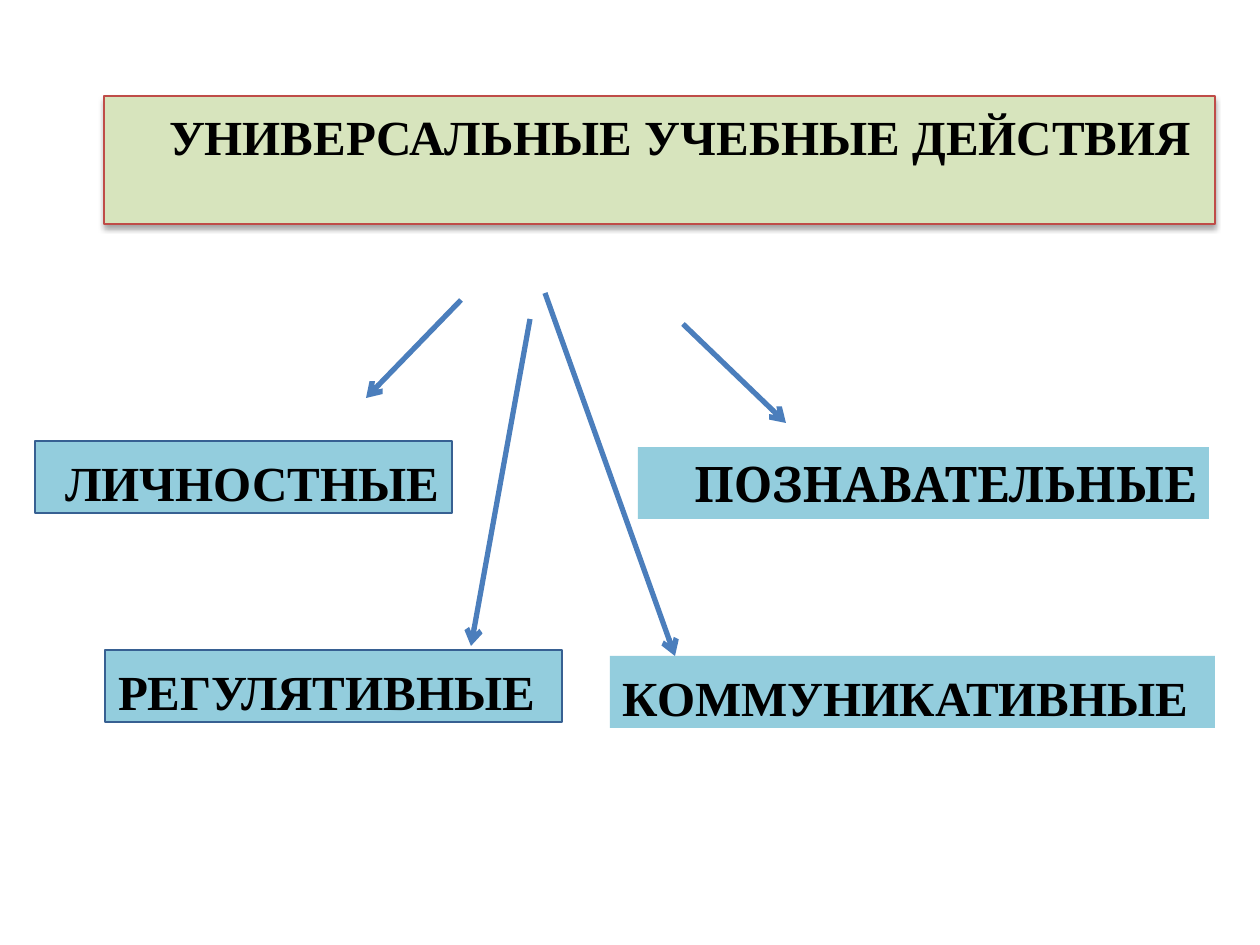
"""Build a slide that splits universal learning actions into four kinds."""
from lxml import etree
from pptx import Presentation
from pptx.dml.color import RGBColor
from pptx.enum.shapes import MSO_CONNECTOR, MSO_SHAPE
from pptx.enum.text import MSO_ANCHOR, PP_ALIGN
from pptx.oxml.ns import qn
from pptx.util import Emu, Pt

RECT = MSO_SHAPE.RECTANGLE
STRAIGHT = MSO_CONNECTOR.STRAIGHT
TOP = MSO_ANCHOR.TOP
LEFT, CENTER, RIGHT = PP_ALIGN.LEFT, PP_ALIGN.CENTER, PP_ALIGN.RIGHT

WIDTH, HEIGHT = 1260, 945
SCALE = 9144000 / WIDTH
SERIF, BOOK = "Times New Roman", "Cambria"
GREEN, BLUE, RED, NAVY = "D7E4BD", "93CDDD", "BF4C48", "376092"
ARROW, BLACK = "4B7EBC", "000000"

TITLE = ("УНИВЕРСАЛЬНЫЕ УЧЕБНЫЕ ДЕЙСТВИЯ", (104, 96, 1111, 128),
         GREEN, RED, CENTER, SERIF, (54, 11))
KINDS = [
    ("ЛИЧНОСТНЫЕ", (35, 441, 417, 72), BLUE, NAVY, RIGHT, SERIF, (13, 11)),
    ("РЕГУЛЯТИВНЫЕ", (105, 650, 457, 72), BLUE, NAVY, LEFT, SERIF, (13, 11)),
    ("ПОЗНАВАТЕЛЬНЫЕ", (638, 447, 571, 72), BLUE, None, RIGHT, BOOK, (13, 6)),
    ("КОММУНИКАТИВНЫЕ", (610, 656, 605, 72), BLUE, None, LEFT, SERIF, (13, 11)),
]
ARROWS = [
    (461, 300, 366, 398),
    (530, 319, 471, 646),
    (683, 324, 786, 423),
    (545, 293, 675, 656),
]


def px(n):
    return Emu(round(n * SCALE))


def rgb(color):
    return RGBColor.from_string(color)


def add_box(shapes, text, box, fill, line, align, font, insets):
    sp = shapes.add_shape(RECT, *map(px, box))
    sp.shadow.inherit = False
    sp.fill.solid()
    sp.fill.fore_color.rgb = rgb(fill)
    if line:
        sp.line.color.rgb = rgb(line)
        sp.line.width = Pt(0.75)
    else:
        sp.line.fill.background()
    tf = sp.text_frame
    tf.word_wrap = True
    tf.vertical_anchor = TOP
    tf.margin_left, tf.margin_top = map(px, insets)
    tf.margin_right, tf.margin_bottom = px(13), px(4)
    p = tf.paragraphs[0]
    p.alignment = align
    r = p.add_run()
    r.text = text
    r.font.name = font
    r.font.size = Pt(28)
    r.font.bold = True
    r.font.color.rgb = rgb(BLACK)
    return sp


def add_shadow(sp):
    effects = sp._element.spPr.find(qn("a:effectLst"))
    shadow = etree.SubElement(
        effects, qn("a:outerShdw"), blurRad=str(Pt(3.1)), dist=str(Pt(1.8)),
        dir="5400000", rotWithShape="0")
    color = etree.SubElement(shadow, qn("a:srgbClr"), val=BLACK)
    etree.SubElement(color, qn("a:alpha"), val="35000")


def add_arrow(shapes, ends):
    cxn = shapes.add_connector(STRAIGHT, *map(px, ends))
    cxn.line.color.rgb = rgb(ARROW)
    cxn.line.width = Pt(3)
    etree.SubElement(cxn.line._get_or_add_ln(), qn("a:tailEnd"), type="arrow")
    etree.SubElement(cxn._element.spPr, qn("a:effectLst"))


def main():
    prs = Presentation()
    prs.slide_width, prs.slide_height = px(WIDTH), px(HEIGHT)
    s = prs.slides.add_slide(prs.slide_layouts[6])
    add_shadow(add_box(s.shapes, *TITLE))
    for kind in KINDS:
        add_box(s.shapes, *kind)
    for ends in ARROWS:
        add_arrow(s.shapes, ends)
    prs.save("out.pptx")


if __name__ == "__main__":
    main()
